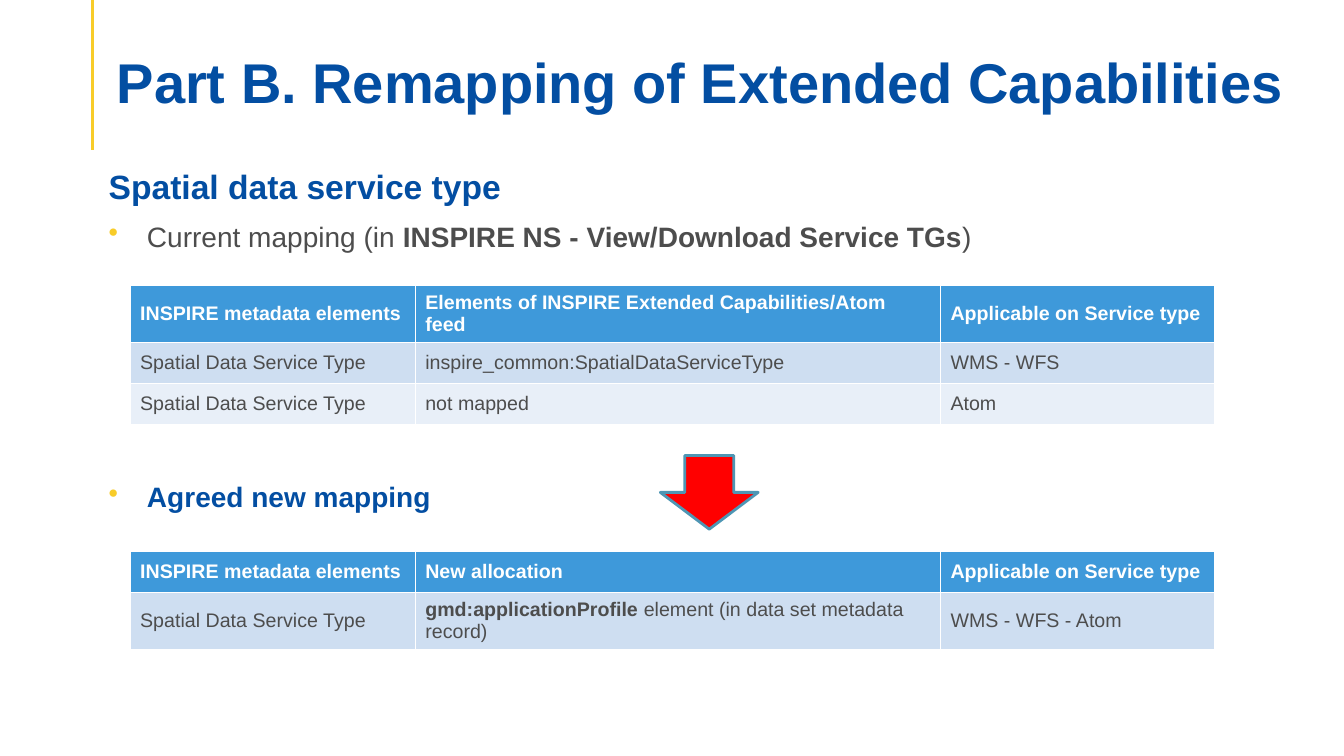
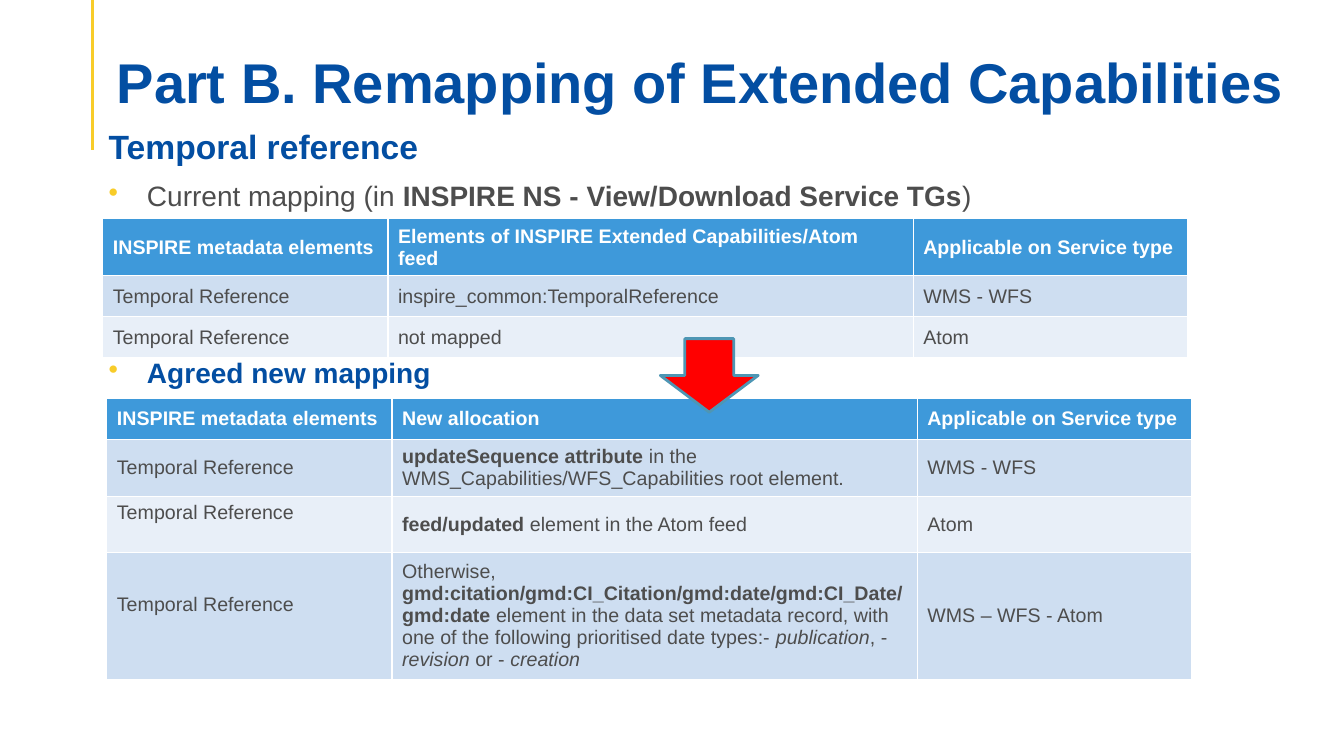
"""Build two slides on the remapping of extended capabilities."""
from lxml import etree
from pptx import Presentation
from pptx.dml.color import RGBColor
from pptx.enum.shapes import MSO_CONNECTOR, MSO_SHAPE
from pptx.enum.text import MSO_ANCHOR
from pptx.oxml.ns import qn
from pptx.util import Inches, Pt

LINE = MSO_CONNECTOR.STRAIGHT
ARROW = MSO_SHAPE.DOWN_ARROW
MIDDLE = MSO_ANCHOR.MIDDLE

HUES = {
    "blue": "034EA2", "gold": "F8CC29", "grey": "4D4D4D", "white": "FFFFFF",
    "head": "3E99DA", "odd": "CEDEF1", "even": "E8EFF8",
    "red": "FF0000", "edge": "4E96B4",
}
RGB = {name: RGBColor.from_string(code) for name, code in HUES.items()}

TITLE = "Part B. Remapping of Extended Capabilities"
CURRENT = "Current mapping (in *INSPIRE NS - View/Download Service TGs*)"
AGREED = "Agreed new mapping"
FIRST, LAST = "INSPIRE metadata elements", "Applicable on Service type"
OLD_HEAD = ("Elements of INSPIRE Extended Capabilities/Atom feed", LAST, 2, 0)
NEW_HEAD = ("New allocation", LAST, 1, 0)
COLS = (21.22, 39.08, 20.4)
TEXT_X, TEXT_W = 7.35, 89
GAP = 0.22

SLIDES = [
    {
        "topic": "Spatial data service type", "name": "Spatial Data Service Type",
        "top": 21.33, "agreed": 62.8, "arrow": 60.27,
        "tables": [
            (9.68, 37.73, [
                OLD_HEAD,
                ("inspire_common:SpatialDataServiceType", "WMS - WFS", 1, 0),
                ("not mapped", "Atom", 1, 0),
            ]),
            (9.68, 72.93, [
                NEW_HEAD,
                ("*gmd:applicationProfile *element (in data set metadata record)",
                 "WMS - WFS - Atom", 2, 0),
            ]),
        ],
    },
    {
        "topic": "Temporal reference", "name": "Temporal Reference",
        "top": 16, "agreed": 46.4, "arrow": 44.8,
        "tables": [
            (7.65, 28.93, [
                OLD_HEAD,
                ("inspire_common:TemporalReference", "WMS - WFS", 1, 0),
                ("not mapped", "Atom", 1, 0),
            ]),
            (7.95, 52.67, [
                NEW_HEAD,
                ("*updateSequence attribute* in the "
                 "WMS_Capabilities/WFS_Capabilities root element.", "WMS - WFS", 2, 0),
                ("*feed/updated *element in the Atom feed", "Atom", 2, GAP),
                ("Otherwise, *gmd:citation/gmd:CI_Citation/gmd:date/gmd:CI_Date/gmd:date *"
                 "element in the data set metadata record, with one of the following "
                 "prioritised date types:- ~publication~, - ~revision~ or - ~creation~",
                 "WMS – WFS - Atom", 5, GAP),
            ]),
        ],
    },
]

deck = Presentation()
deck.slide_width, deck.slide_height = Inches(13.33), Inches(7.5)


def place(left, top, width, height):
    """Turn percentages of the slide into lengths."""
    wide, high = deck.slide_width / 100, deck.slide_height / 100
    return int(left * wide), int(top * high), int(width * wide), int(height * high)


def write(para, text, size, hue, bold=None, bullet=False):
    """Fill a paragraph, with *bold* and ~italic~ parts."""
    if bullet:
        props = para._p.get_or_add_pPr()
        props.set("marL", str(Inches(0.38)))
        props.set("indent", str(-Inches(0.38)))
        tint = etree.SubElement(props, qn("a:buClr"))
        etree.SubElement(tint, qn("a:srgbClr"), val=HUES["gold"])
        etree.SubElement(props, qn("a:buChar"), char="•")
    font = para.font
    font.name, font.size, font.bold = "Arial", Pt(size), bold
    font.color.rgb = RGB[hue]
    for i, part in enumerate(text.split("*")):
        for j, piece in enumerate(part.split("~")):
            if piece:
                run = para.add_run()
                run.text = piece
                if i % 2:
                    run.font.bold = True
                if j % 2:
                    run.font.italic = True


for page in SLIDES:
    slide = deck.slides.add_slide(deck.slide_layouts[6])
    shapes = slide.shapes

    x, y, _, drop = place(6.9, 0, 0, 19.87)
    rule = shapes.add_connector(LINE, x, y, x, drop)
    rule.line.color.rgb, rule.line.width = RGB["gold"], Pt(2.25)
    etree.SubElement(rule._element.spPr, qn("a:effectLst"))

    frame = shapes.add_textbox(*place(7.95, 5.2, 89, 11.47)).text_frame
    frame.word_wrap, frame.vertical_anchor = True, MIDDLE
    frame.margin_bottom = 0
    para = frame.paragraphs[0]
    para.line_spacing = 0.9
    write(para, TITLE, 40, "blue", True)

    frame = shapes.add_textbox(*place(TEXT_X, page["top"], TEXT_W, 13)).text_frame
    frame.word_wrap = True
    para = frame.paragraphs[0]
    para.space_after = Pt(9)
    write(para, page["topic"], 24, "blue", True)
    write(frame.add_paragraph(), CURRENT, 20, "grey", bullet=True)

    frame = shapes.add_textbox(*place(TEXT_X, page["agreed"], TEXT_W, 6)).text_frame
    frame.word_wrap = True
    write(frame.paragraphs[0], AGREED, 20, "blue", True, True)

    for left, top, rows in page["tables"]:
        highs = [max(5.42, 1.3 + 2.92 * row[2]) for row in rows]
        box = place(left, top, sum(COLS), sum(highs))
        table = shapes.add_table(len(rows), len(COLS), *box).table
        for col, share in zip(table.columns, COLS):
            col.width = place(0, 0, share, 0)[2]
        for r, (item, kind, _, gap) in enumerate(rows):
            table.rows[r].height = place(0, 0, 0, highs[r])[3]
            fill = "odd" if r % 2 else "even" if r else "head"
            texts = (page["name"] if r else FIRST, item, kind)
            for c, text in enumerate(texts):
                cell = table.cell(r, c)
                cell.fill.solid()
                cell.fill.fore_color.rgb = RGB[fill]
                cell.vertical_anchor = MIDDLE
                if gap and c == 0:
                    cell.margin_bottom = Inches(0.05 + gap)
                hue = "grey" if r else "white"
                write(cell.text_frame.paragraphs[0], text, 14, hue, r == 0)

    arrow = shapes.add_shape(ARROW, *place(49.13, page["arrow"], 7.28, 9.73))
    arrow.shadow.inherit = False
    arrow.fill.solid()
    arrow.fill.fore_color.rgb = RGB["red"]
    arrow.line.color.rgb, arrow.line.width = RGB["edge"], Pt(2)

deck.save("out.pptx")
